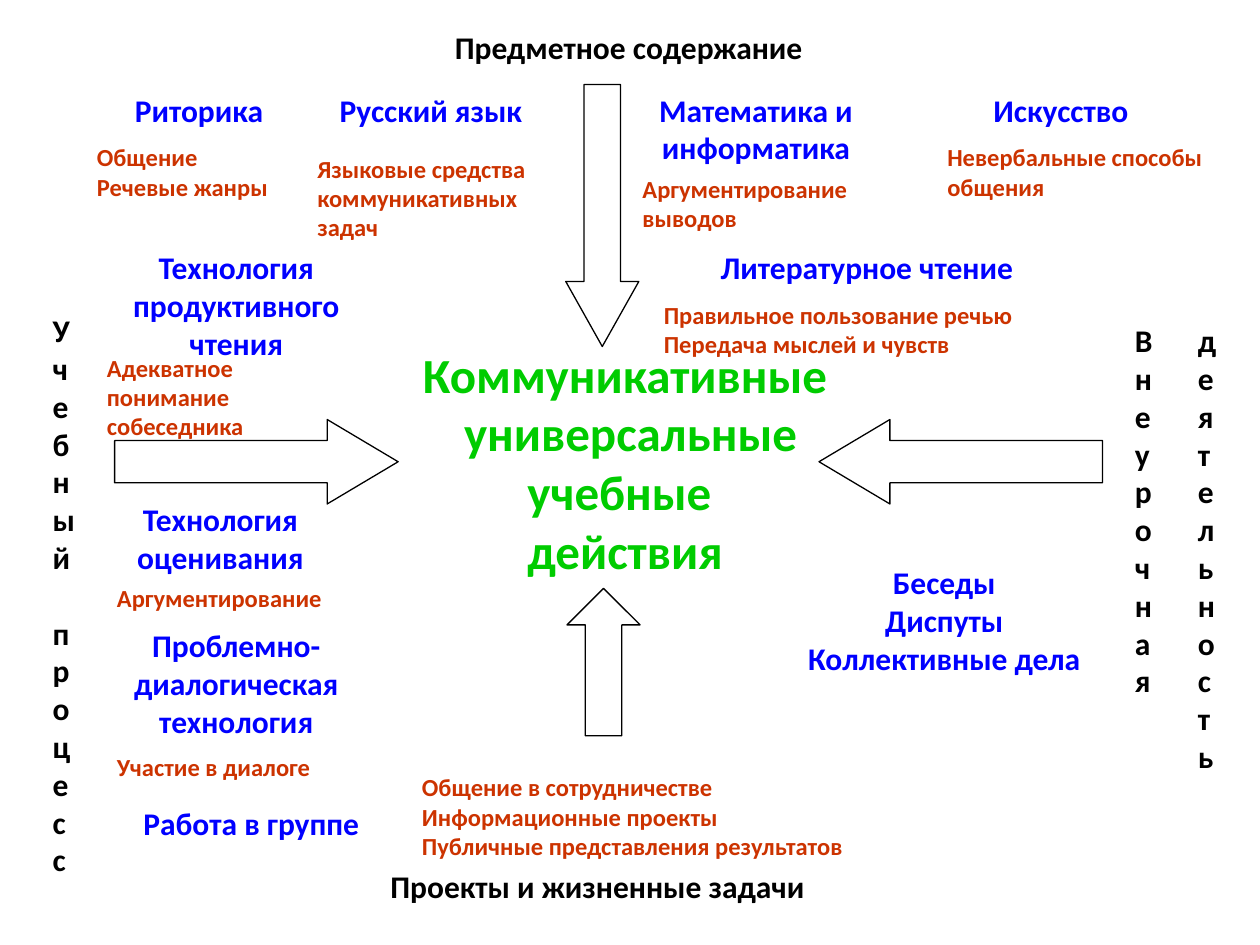
from pptx import Presentation
from pptx import util as u
from pptx.dml.color import RGBColor
from pptx.enum import shapes, text

Inches = u.Inches
COLORS = {"black": "000000", "blue": "0000FF", "red": "CC3300", "green": "00CC00"}
CENTER, LEFT = text.PP_ALIGN.CENTER, text.PP_ALIGN.LEFT
STYLES = {
    "core": {"size": 28, "color": "green", "align": CENTER},
    "label": {"size": 18, "color": "black", "align": LEFT},
    "heading": {"size": 18, "color": "blue", "align": CENTER},
    "skill": {"size": 14, "color": "red", "align": LEFT},
}
SHAPE = shapes.MSO_SHAPE


def write(tf, lines, style, align=None):
    """Fill a text frame, one paragraph for each line."""
    fmt = STYLES[style]
    tf.word_wrap = True
    tf.text = "\n".join(lines)
    for p in tf.paragraphs:
        p.alignment = fmt["align"] if align is None else align
        for r in p.runs:
            values = {"name": "Calibri", "size": u.Pt(fmt["size"]), "bold": True}
            for name, value in values.items():
                setattr(r.font, name, value)
            r.font.color.rgb = RGBColor.from_string(COLORS[fmt["color"]])


def add_text(s, box, lines, style, align=None):
    sp = s.shapes.add_textbox(*map(Inches, box))
    write(sp.text_frame, lines, style, align)
    sp.text_frame.auto_size = text.MSO_AUTO_SIZE.SHAPE_TO_FIT_TEXT


def add_arrow(s, kind, box, head):
    sp = s.shapes.add_shape(kind, *map(Inches, box))
    sp.adjustments[0], sp.adjustments[1] = 0.5, head
    sp.shadow.inherit = False
    sp.fill.background()
    sp.line.color.rgb = RGBColor.from_string(COLORS["black"])
    sp.line.width = u.Pt(0.75)


def add_items(s, box, items):
    """Place texts at offsets from the corner of a region."""
    left, top = box[:2]
    for style, dx, dy, w, h, *lines in items:
        add_text(s, (left + dx, top + dy, w, h), lines, style)


def add_core(s, box):
    sp = s.shapes.title
    sp.left, sp.top, sp.width, sp.height = map(Inches, box)
    tf = sp.text_frame
    write(tf, ["Коммуникативные\v универсальные учебные \vдействия"], "core")
    tf.auto_size = text.MSO_AUTO_SIZE.NONE
    tf.vertical_anchor = text.MSO_ANCHOR.MIDDLE


def add_subjects(s, box):
    left, top, w, h = box
    add_text(s, (left + 2.16, top, 4.5, 0.4), ["Предметное содержание"], "label", CENTER)
    add_arrow(s, SHAPE.DOWN_ARROW, (left + 3.91, top + 0.5, 0.58, 2.08), 0.89)
    add_items(s, box, [
        ("heading", 0, 0.5, 2, 0.4, "Риторика"),
        ("skill", 0.09, 0.91, 2.25, 0.57, "Общение", "Речевые жанры"),
        ("heading", 1.84, 0.5, 2, 0.4, "Русский язык"),
        ("skill", 1.84, 1, 2.25, 0.8, "Языковые средства коммуникативных задач"),
        ("heading", 4.42, 0.5, 2, 0.7, "Математика и информатика"),
        ("skill", 4.42, 1.16, 2.25, 0.57, "Аргументирование выводов"),
        ("heading", 6.84, 0.5, 2, 0.4, "Искусство"),
        ("skill", 6.84, 0.91, 2.5, 0.57, "Невербальные способы общения"),
        ("heading", 4.59, 1.75, 3.42, 0.4, "Литературное чтение"),
        ("skill", 4.59, 2.16, 3.5, 0.57,
         "Правильное пользование речью", "Передача мыслей и чувств"),
    ])


def add_learning(s, box):
    left, top, w, h = box
    # The narrow box stacks the letters
    add_text(s, (left, top + 0.5, 0.33, 4.61), ["Учебный процесс"], "label")
    add_arrow(s, SHAPE.RIGHT_ARROW, (left + 0.59, top + 1.41, 2.25, 0.67), 0.84)
    add_items(s, box, [
        ("heading", 0.43, 0, 2.25, 1, "Технология продуктивного чтения"),
        ("skill", 0.43, 0.83, 2.08, 0.8, "Адекватное понимание собеседника"),
        ("heading", 0.43, 2, 2, 0.7, "Технология оценивания"),
        ("skill", 0.51, 2.66, 2.83, 0.33, "Аргументирование"),
        ("heading", 0.43, 3, 2.25, 1, "Проблемно-диалогическая технология"),
        ("skill", 0.51, 4, 2, 0.33, "Участие в диалоге"),
        ("heading", 0.51, 4.41, 2.33, 0.4, "Работа в группе"),
    ])


def add_activities(s, box):
    left, top, w, h = box
    for dx, height, word in ((2.83, 3.1, "Внеурочная"), (3.33, 3.7, "деятельность")):
        add_text(s, (left + dx, top, 0.33, height), [word], "label")
    add_arrow(s, SHAPE.LEFT_ARROW, (left + 0.42, top + 0.83, 2.25, 0.67), 0.84)
    add_text(s, (left, top + 1.92, 2.83, 1),
             ["Беседы", "Диспуты", "Коллективные дела"], "heading")


def add_projects(s, box):
    left, top, w, h = box
    add_arrow(s, SHAPE.UP_ARROW, (left + 1.5, top, 0.58, 1.17), 0.5)
    add_items(s, box, [
        ("skill", 0.25, 1.41, 4.25, 0.8, "Общение в сотрудничестве",
         "Информационные проекты", "Публичные представления результатов"),
        ("label", 0, 2.16, 4.08, 0.4, "Проекты и жизненные задачи"),
    ])


def main():
    prs = Presentation()
    prs.slide_width, prs.slide_height = Inches(10), Inches(7.5)
    s = prs.slides.add_slide(prs.slide_layouts[5])
    add_core(s, (3, 3, 3.92, 1.33))
    add_subjects(s, (0.58, 0.17, 9.34, 2.73))
    add_learning(s, (0.32, 1.92, 3.34, 5.11))
    add_activities(s, (6.08, 2.5, 3.66, 3.7))
    add_projects(s, (3, 4.67, 4.5, 2.56))
    prs.save("out.pptx")


if __name__ == "__main__":
    main()
